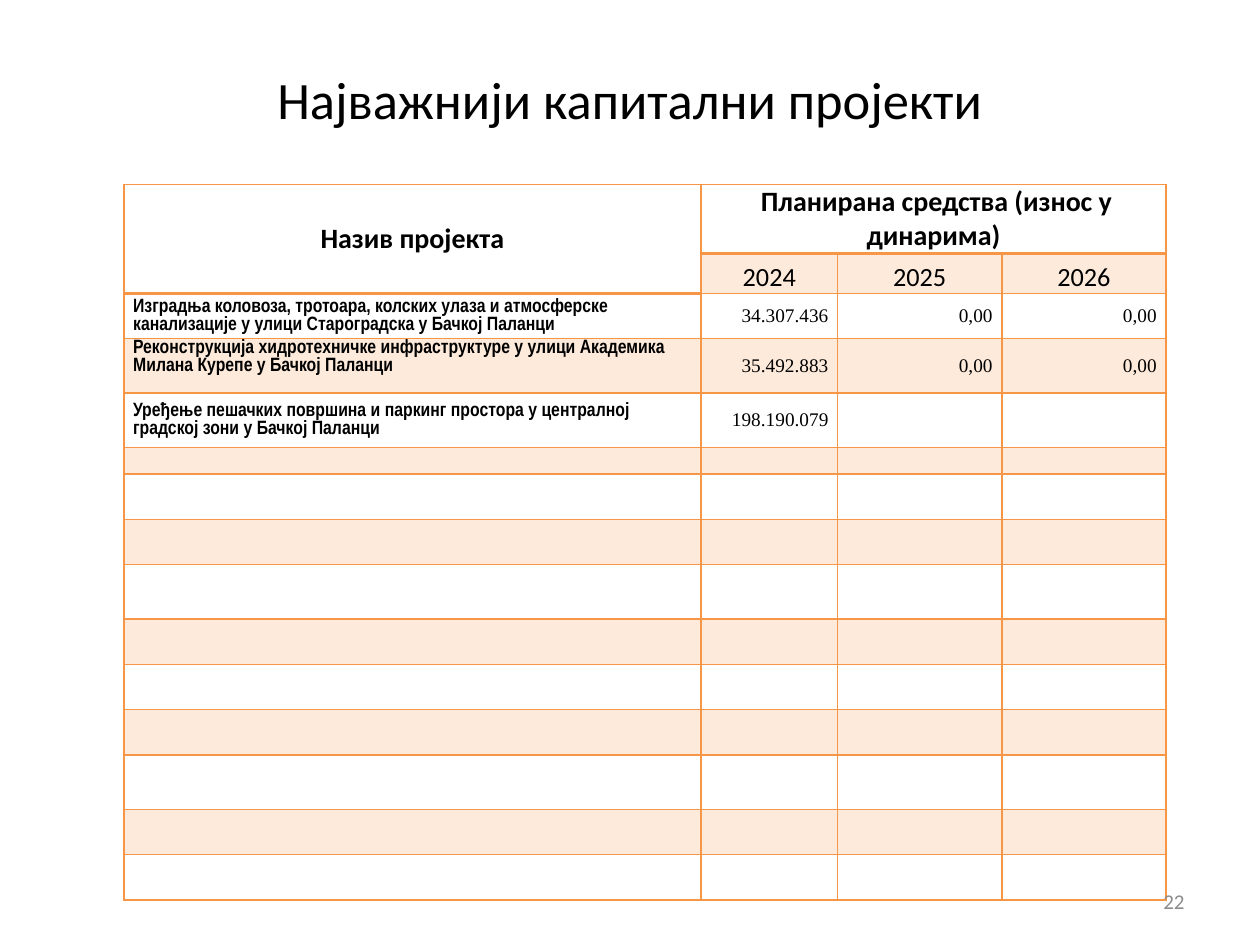
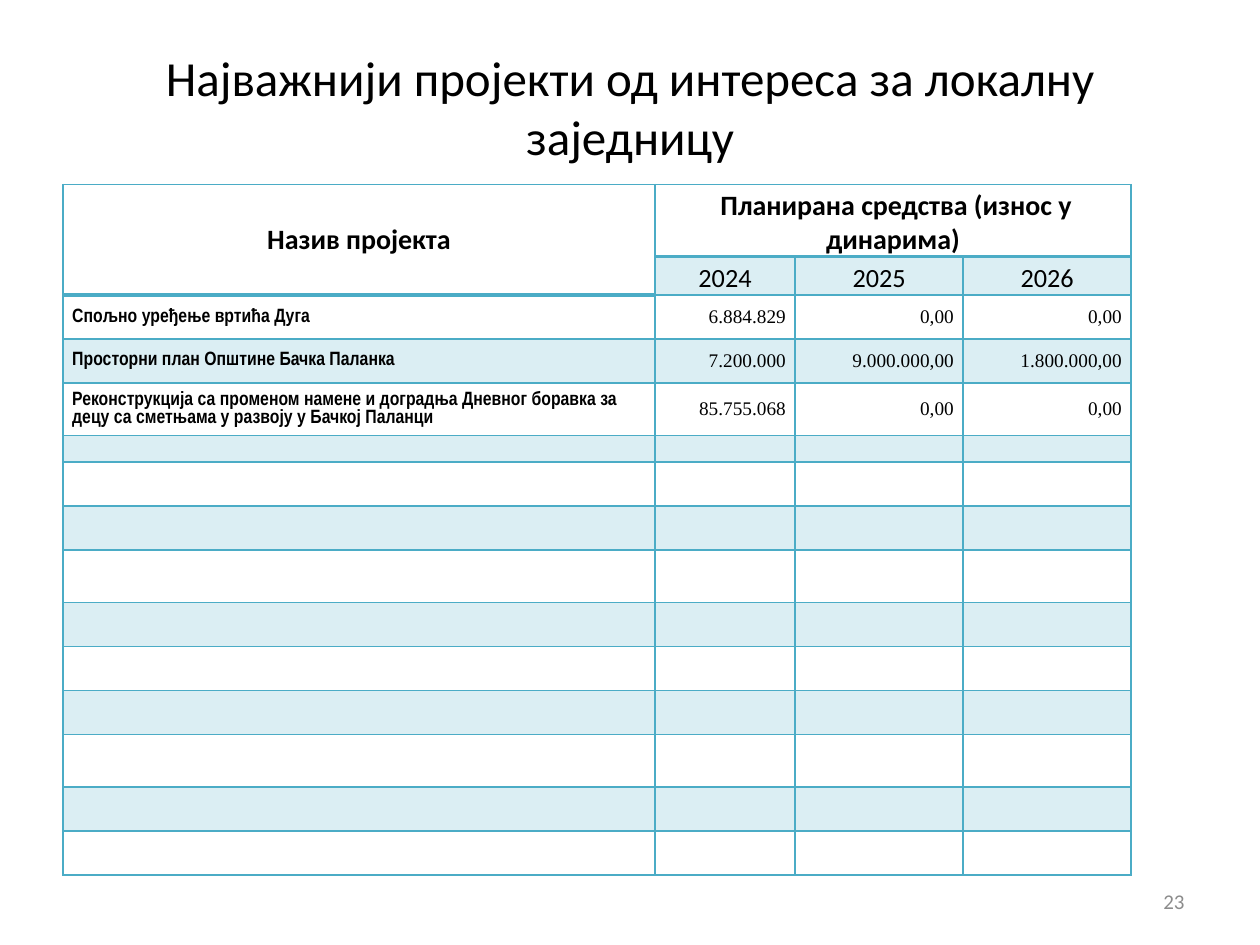
"""Build two slides that list the planned capital and community projects."""
from dataclasses import dataclass
from typing import Any

from lxml import etree
from pptx import Presentation
from pptx.dml.color import RGBColor
from pptx.enum import text as t
from pptx.oxml.ns import qn
from pptx.util import Pt

BLACK = RGBColor(0x00, 0x00, 0x00)
GREY = RGBColor(0x8C, 0x8C, 0x8C)
ORANGE = RGBColor(0xF7, 0x96, 0x46)
TEAL = RGBColor(0x4B, 0xAC, 0xC6)

CENTER, RIGHT, LEFT = t.PP_ALIGN.CENTER, t.PP_ALIGN.RIGHT, t.PP_ALIGN.LEFT
MIDDLE, BOTTOM = t.MSO_ANCHOR.MIDDLE, t.MSO_ANCHOR.BOTTOM
HEADER_FONT = {"name": "Calibri", "size": Pt(16), "bold": True}
YEAR_FONT = {"name": "Calibri", "size": Pt(15), "bold": False}
PROJECT_FONT = {"name": "Arial Narrow", "size": Pt(11), "bold": True}
AMOUNT_FONT = {"name": "Times New Roman", "size": Pt(11), "bold": False}
NUMBER_FONT = {"name": "Calibri", "size": Pt(12)}

YEARS = ("2024", "2025", "2026")
TABLE_TOP = 105.5
SIDES = {"lnL": "left", "lnR": "right", "lnT": "top", "lnB": "bottom"}


@dataclass(frozen=True)
class Project:
    name: str
    amounts: tuple[str, ...]
    bottom_gap: float = 0


@dataclass(frozen=True)
class ProjectSlide:
    title: str
    title_size: float
    title_height: float
    number: str
    accent: RGBColor
    left: float
    columns: tuple[float, ...]
    header_rows: tuple[float, float]
    body_rows: str
    heights: dict[str, float]
    projects: tuple[Project, ...]


SLIDES = (
    ProjectSlide(
        "Најважнији капитални пројекти", 30, 69, "22", ORANGE, 70.8,
        (329.7, 78.2, 93.8, 93.8), (39.4, 22.8), "NTTSNNTNNNTNN",
        {"N": 25.9, "T": 31.1, "S": 15.2},
        (
            Project("Изградња коловоза, тротоара, колских улаза и атмосферске "
                    "канализације у улици Староградска у Бачкој Паланци",
                    ("34.307.436", "0,00", "0,00")),
            Project("Реконструкција хидротехничке инфраструктуре у улици "
                    "Академика Милана Курепе у Бачкој Паланци",
                    ("35.492.883", "0,00", "0,00"), bottom_gap=10),
            Project("Уређење пешачких површина и паркинг простора у централној "
                    "градској зони у Бачкој Паланци", ("198.190.079",)),
        ),
    ),
    ProjectSlide(
        "Најважнији пројекти од интереса за локалну заједницу", 28, 78.5,
        "23", TEAL, 36, (338.3, 80.1, 96, 96), (41.3, 21.8),
        "NNTSNNTNNNTNN", {"N": 25.1, "T": 30.2, "S": 15.1},
        (
            Project("Спољно уређење вртића Дуга",
                    ("6.884.829", "0,00", "0,00")),
            Project("Просторни план Општине Бачка Паланка",
                    ("7.200.000", "9.000.000,00", "1.800.000,00")),
            Project("Реконструкција са променом намене и доградња Дневног "
                    "боравка за децу са сметњама у развоју у Бачкој Паланци",
                    ("85.755.068", "0,00", "0,00")),
        ),
    ),
)


def set_format(target: Any, values: dict[str, Any]) -> None:
    for name, value in values.items():
        setattr(target, name, value)


def write(frame: Any, words: str, font: dict[str, Any], align: Any,
          color: RGBColor = BLACK) -> None:
    para = frame.paragraphs[0]
    para.alignment = align
    span = para.add_run()
    span.text = words
    set_format(span.font, font)
    span.font.color.rgb = color


def draw_borders(cell: Any, color: RGBColor, heavy: set[str]) -> None:
    properties = cell._tc.get_or_add_tcPr()
    for tag, side in SIDES.items():
        width = Pt(2 if side in heavy else 1)
        line = etree.SubElement(properties, qn(f"a:{tag}"), w=str(width))
        fill = etree.SubElement(line, qn("a:solidFill"))
        etree.SubElement(fill, qn("a:srgbClr"), val=str(color))


def fill_cell(cell: Any, color: RGBColor, shaded: bool) -> None:
    if not shaded:
        cell.fill.background()
        return
    cell.fill.solid()
    cell.fill.fore_color.rgb = color
    tint = cell._tc.tcPr.find(f"{qn('a:solidFill')}/{qn('a:srgbClr')}")
    etree.SubElement(tint, qn("a:alpha"), val="20000")


def style_cell(cell: Any, row: int, column: int, color: RGBColor) -> None:
    set_format(cell, {"margin_left": Pt(5.3), "margin_right": Pt(5.3),
                      "margin_top": 0, "margin_bottom": 0,
                      "vertical_anchor": MIDDLE})
    heavy_row = 1 if column == 0 else 0
    heavy = {heavy_row: {"bottom"}, heavy_row + 1: {"top"}}.get(row, set())
    draw_borders(cell, color, heavy)
    fill_cell(cell, color, row % 2 == 1 and (row, column) != (1, 0))


def write_header(table: Any) -> None:
    name, funds = table.cell(0, 0), table.cell(0, 1)
    name.merge(table.cell(1, 0))
    funds.merge(table.cell(0, 3))
    write(name.text_frame, "Назив пројекта", HEADER_FONT, CENTER)
    write(funds.text_frame, " Планирана средства (износ у динарима)",
          HEADER_FONT, CENTER)
    funds.vertical_anchor = BOTTOM
    for column, year in enumerate(YEARS, 1):
        cell = table.cell(1, column)
        cell.vertical_anchor = BOTTOM
        write(cell.text_frame, year, YEAR_FONT, CENTER)


def write_project(table: Any, row: int, project: Project) -> None:
    cell = table.cell(row, 0)
    cell.margin_bottom = Pt(project.bottom_gap)
    write(cell.text_frame, project.name, PROJECT_FONT, LEFT)
    for column, amount in enumerate(project.amounts, 1):
        write(table.cell(row, column).text_frame, amount, AMOUNT_FONT, RIGHT)


def add_project_table(page: Any, content: ProjectSlide) -> None:
    heights = [*content.header_rows,
               *(content.heights[kind] for kind in content.body_rows)]
    table = page.shapes.add_table(
        len(heights), len(content.columns), Pt(content.left), Pt(TABLE_TOP),
        Pt(sum(content.columns)), Pt(sum(heights))).table
    set_format(table, {"first_row": False, "horz_banding": False})
    for column, width in zip(table.columns, content.columns):
        column.width = Pt(width)
    for index, height in enumerate(heights):
        table.rows[index].height = Pt(height)
        for column in range(len(content.columns)):
            style_cell(table.cell(index, column), index, column,
                       content.accent)
    write_header(table)
    for row, project in enumerate(content.projects, 2):
        write_project(table, row, project)
    for cell in table.iter_cells():
        para = cell.text_frame.paragraphs[0]
        if not para.runs:
            etree.SubElement(para._p, qn("a:endParaRPr"), sz="1100")


def add_title(page: Any, content: ProjectSlide) -> None:
    title = page.shapes.title
    set_format(title, {"left": Pt(36), "top": Pt(21.6), "width": Pt(648),
                       "height": Pt(content.title_height)})
    set_format(title.text_frame, {"word_wrap": True, "vertical_anchor": MIDDLE,
                                  "auto_size": t.MSO_AUTO_SIZE.NONE})
    font = {"name": "Calibri", "size": Pt(content.title_size)}
    write(title.text_frame, content.title, font, CENTER)


def add_page_number(page: Any, number: str) -> None:
    box = page.shapes.add_textbox(Pt(516), Pt(500.5), Pt(168), Pt(28.8))
    set_format(box.text_frame, {"word_wrap": True, "vertical_anchor": MIDDLE})
    write(box.text_frame, number, NUMBER_FONT, RIGHT, GREY)


def main() -> None:
    deck = Presentation()
    set_format(deck, {"slide_width": Pt(720), "slide_height": Pt(540)})
    for content in SLIDES:
        page = deck.slides.add_slide(deck.slide_layouts.get_by_name("Title Only"))
        add_title(page, content)
        add_project_table(page, content)
        add_page_number(page, content.number)
    deck.save("out.pptx")


if __name__ == "__main__":
    main()
